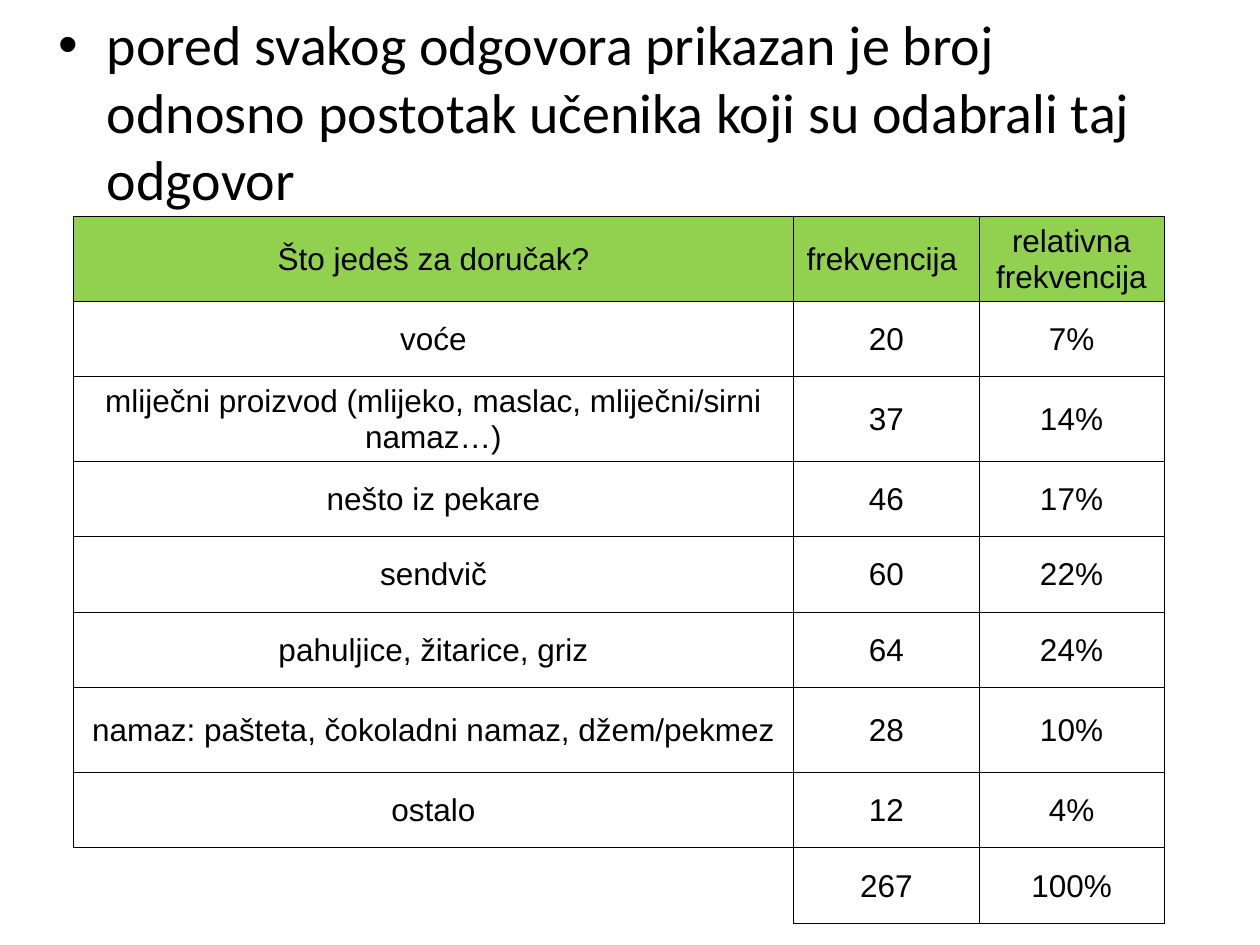
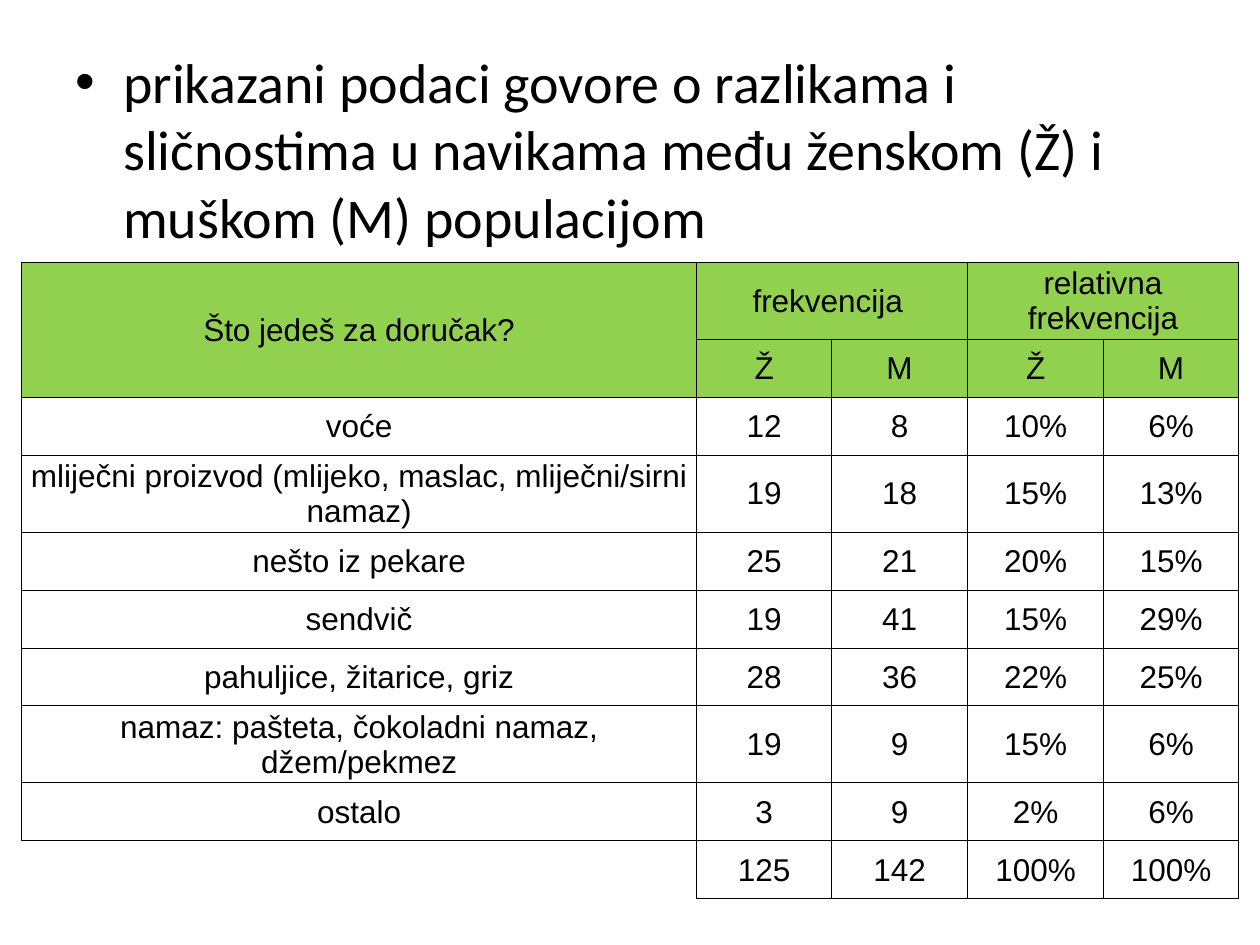
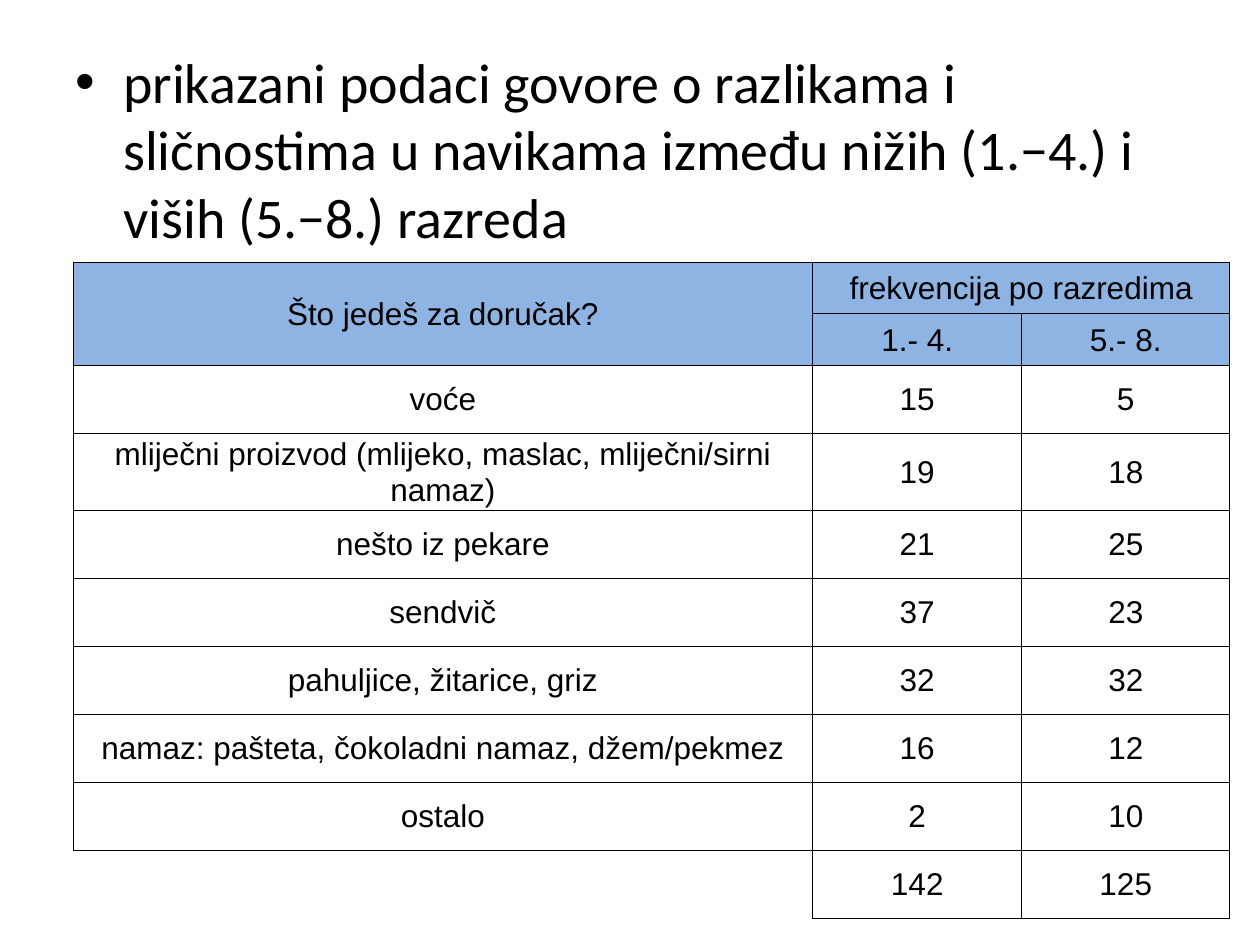
from dataclasses import dataclass

from lxml.etree import SubElement as Sub
from pptx import Presentation
from pptx.dml.color import RGBColor as Rgb
from pptx.enum.text import MSO_ANCHOR as Anchor, PP_ALIGN as Align
from pptx.oxml.ns import qn
from pptx.util import Inches, Pt

WIDE, HIGH = Inches(10), Inches(7.5)
COLS, ROWS = 100, 75
INK, GREEN, BLUE = "000000", "92D050", "8DB4E2"
PLAIN = "{2D5ABB26-0587-4C30-8999-92F81FD0307C}"
ASK = "Što jedeš za doručak?"
COUNT, SHARE = "frekvencija ", "relativna frekvencija"
MILK = "mliječni proizvod (mlijeko, maslac, mliječni/sirni namaz{})"
FOODS = (
    "voće",
    MILK,
    "nešto iz pekare",
    "sendvič",
    "pahuljice, žitarice, griz",
    "namaz: pašteta, čokoladni namaz, džem/pekmez",
    "ostalo",
)


@dataclass
class Box:
    left: float
    top: float
    width: float
    height: float

    def place(self) -> tuple[int, int, int, int]:
        return across(self.left), down(self.top), across(self.width), down(self.height)


@dataclass
class Page:
    text: str
    area: Box
    grid: Box
    cols: list[float]
    rows: list[float]
    heads: list[list[str]]
    counts: list[list[int]]
    fill: str = GREEN
    shares: bool = True
    tail: str = ""


BODY = Box(5, 3.3, 90, 63.7)
PAGES = [
    Page(
        "pored svakog odgovora prikazan je broj odnosno postotak učenika koji su odabrali taj odgovor",
        Box(3.7, 0.3, 91.3, 66.7),
        Box(5.8, 17.2, 86.7, 56.1),
        [57.2, 14.7, 14.7],
        [6.7, 6, 6.7, 6, 6, 6, 6.7, 6, 6],
        [[ASK, COUNT, SHARE]],
        [[20, 37, 46, 60, 64, 28, 12]],
        tail="…",
    ),
    Page(
        "prikazani podaci govore o razlikama i sličnostima u navikama među ženskom (Ž) i muškom (M) populacijom",
        BODY,
        Box(1.7, 20.8, 96.7, 50.7),
        [53.6, 10.7, 10.8, 10.8, 10.7],
        [4.6] * 3 + [5.9] + [4.6] * 6,
        [[ASK, COUNT, "", SHARE, ""], ["", "Ž", "M", "Ž", "M"]],
        [[12, 19, 25, 19, 28, 19, 3], [8, 18, 21, 41, 36, 9, 9]],
    ),
    Page(
        "prikazani podaci govore o razlikama i sličnostima u navikama između nižih (1.−4.) i viših (5.−8.) razreda",
        BODY,
        Box(5.8, 20.8, 91.7, 52.3),
        [58.7, 16.6, 16.5],
        [4.1] * 2 + [5.4] * 8,
        [[ASK, "frekvencija po razredima", ""], ["", "1.- 4.", "5.- 8."]],
        [[15, 19, 21, 37, 32, 16, 2], [5, 18, 25, 23, 32, 12, 10]],
        BLUE,
        False,
    ),
]


def across(n: float) -> int:
    return round(WIDE * n / COLS)


def down(n: float) -> int:
    return round(HIGH * n / ROWS)


def tint(code: str) -> Rgb:
    return Rgb.from_string(code)


def style(par, face: str, size: int) -> None:
    for run in par.runs:
        run.font.name = face
        run.font.size = Pt(size)
        run.font.color.rgb = tint(INK)


def add_note(slide, text: str, area: Box) -> None:
    frame = slide.shapes.add_textbox(*area.place()).text_frame
    frame.word_wrap = True
    par = frame.paragraphs[0]
    par.text = text
    style(par, "Calibri", 32)
    props = par._p.get_or_add_pPr()
    props.set("marL", str(Inches(0.38)))
    props.set("indent", str(-Inches(0.38)))
    Sub(Sub(props, qn("a:spcBef")), qn("a:spcPct"), val="20000")
    Sub(props, qn("a:buFont"), typeface="Arial")
    Sub(props, qn("a:buChar"), char="•")


def add_edges(cell, shown: str) -> None:
    props = cell._tc.get_or_add_tcPr()
    for side in "LRTB":
        line = Sub(props, qn(f"a:ln{side}"), w=str(Pt(0.5)))
        if side in shown:
            Sub(Sub(line, qn("a:solidFill")), qn("a:srgbClr"), val=INK)
        else:
            Sub(line, qn("a:noFill"))


def list_rows(page: Page) -> list[list[str]]:
    foods = [food.format(page.tail) for food in FOODS]
    full = [[*nums, sum(nums)] for nums in page.counts]
    cols = [[str(n) for n in nums] for nums in full]
    if page.shares:
        cols += [[f"{n / nums[-1]:.0%}" for n in nums] for nums in full]
    return page.heads + [list(row) for row in zip([*foods, ""], *cols)]


def set_cell(cell, text: str, edges: str, fill: str) -> None:
    cell.margin_left = cell.margin_right = cell.margin_top = Inches(0.01)
    cell.margin_bottom = Pt(0.1)
    cell.vertical_anchor = Anchor.MIDDLE
    add_edges(cell, edges)
    if fill:
        cell.fill.solid()
        cell.fill.fore_color.rgb = tint(fill)
    else:
        cell.fill.background()
    if text:
        par = cell.text_frame.paragraphs[0]
        par.text = text
        par.alignment = Align.CENTER
        style(par, "Arial", 18)


def add_grid(slide, page: Page) -> None:
    data = list_rows(page)
    shape = slide.shapes.add_table(len(data), len(page.cols), *page.grid.place())
    table = shape.table
    table.first_row = table.horz_banding = False
    table._tbl.tblPr.find(qn("a:tableStyleId")).text = PLAIN
    for col, width in zip(table.columns, page.cols):
        col.width = across(width)
    for row, height in zip(table.rows, page.rows):
        row.height = down(height)
    shape.width, shape.height = page.grid.place()[2:]
    last = len(data) - 1
    for r, row in enumerate(data):
        fill = page.fill if r < len(page.heads) else ""
        for c, text in enumerate(row):
            edges = "RT" if (r, c) == (last, 0) else "LRTB"
            set_cell(table.cell(r, c), text, edges, fill)
    if len(page.heads) > 1:
        table.cell(0, 0).merge(table.cell(1, 0))
        for c in range(1, len(page.cols), 2):
            table.cell(0, c).merge(table.cell(0, c + 1))


def main() -> None:
    deck = Presentation()
    deck.slide_width, deck.slide_height = WIDE, HIGH
    for page in PAGES:
        slide = deck.slides.add_slide(deck.slide_layouts[6])
        add_note(slide, page.text, page.area)
        add_grid(slide, page)
    deck.save("out.pptx")


if __name__ == "__main__":
    main()
